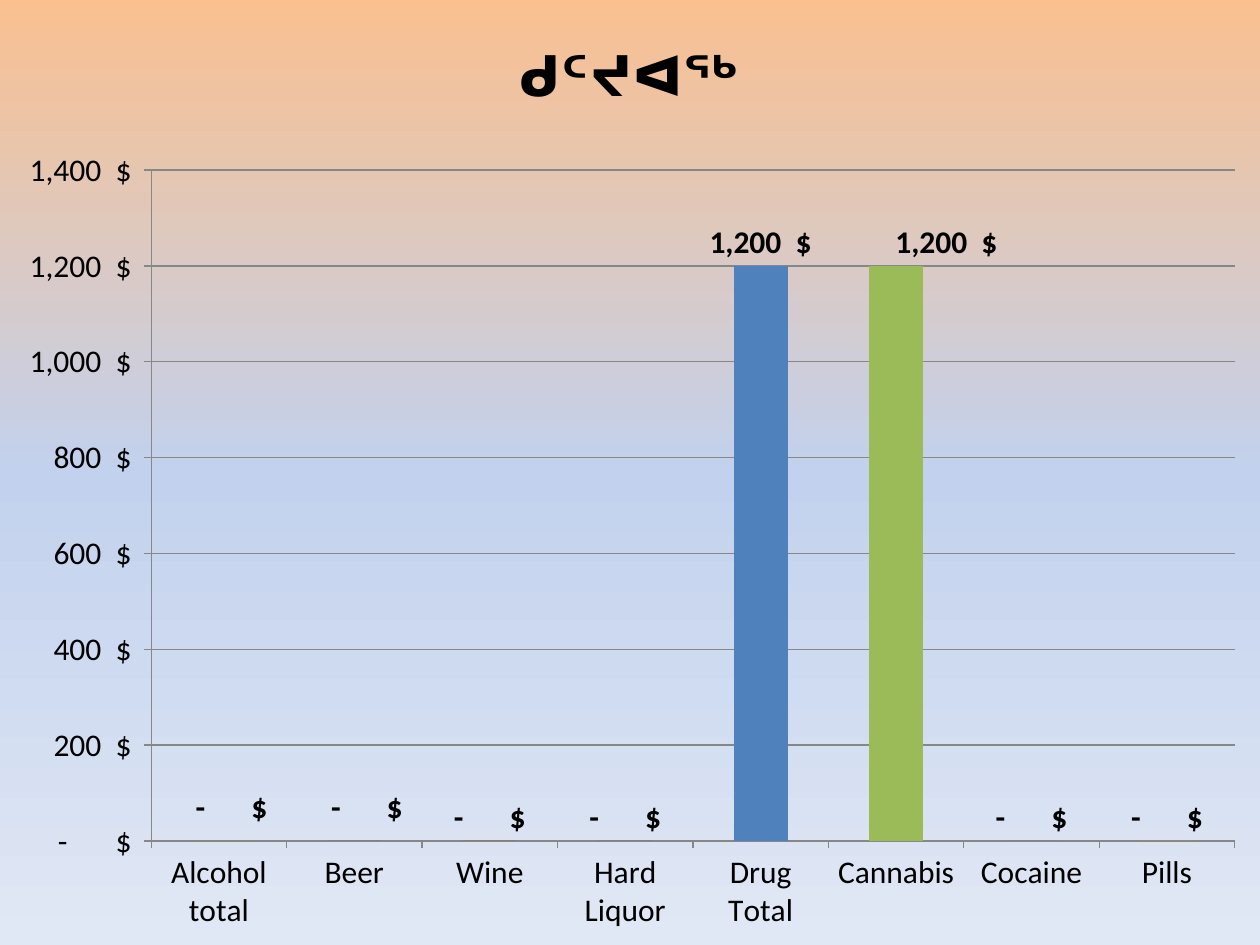
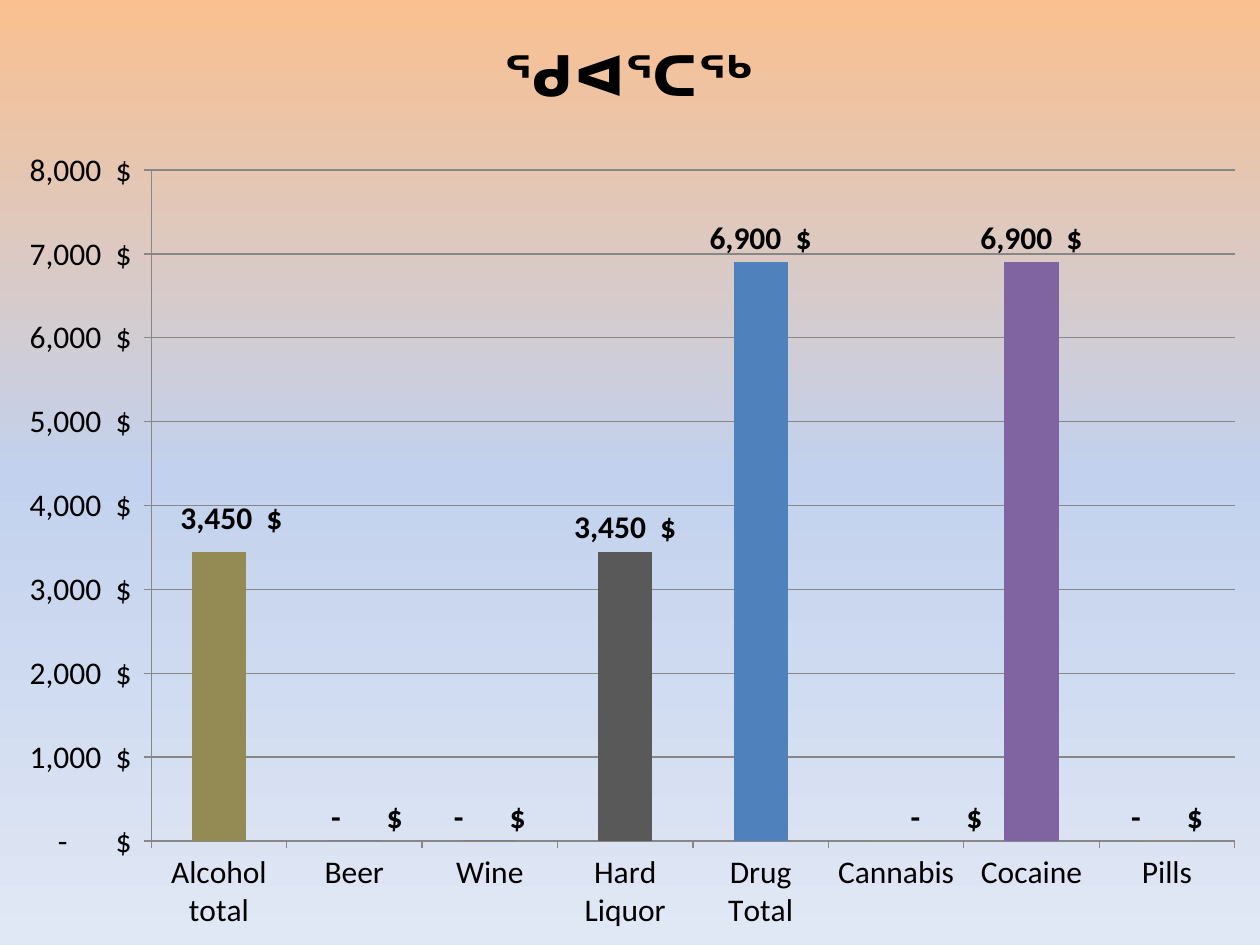
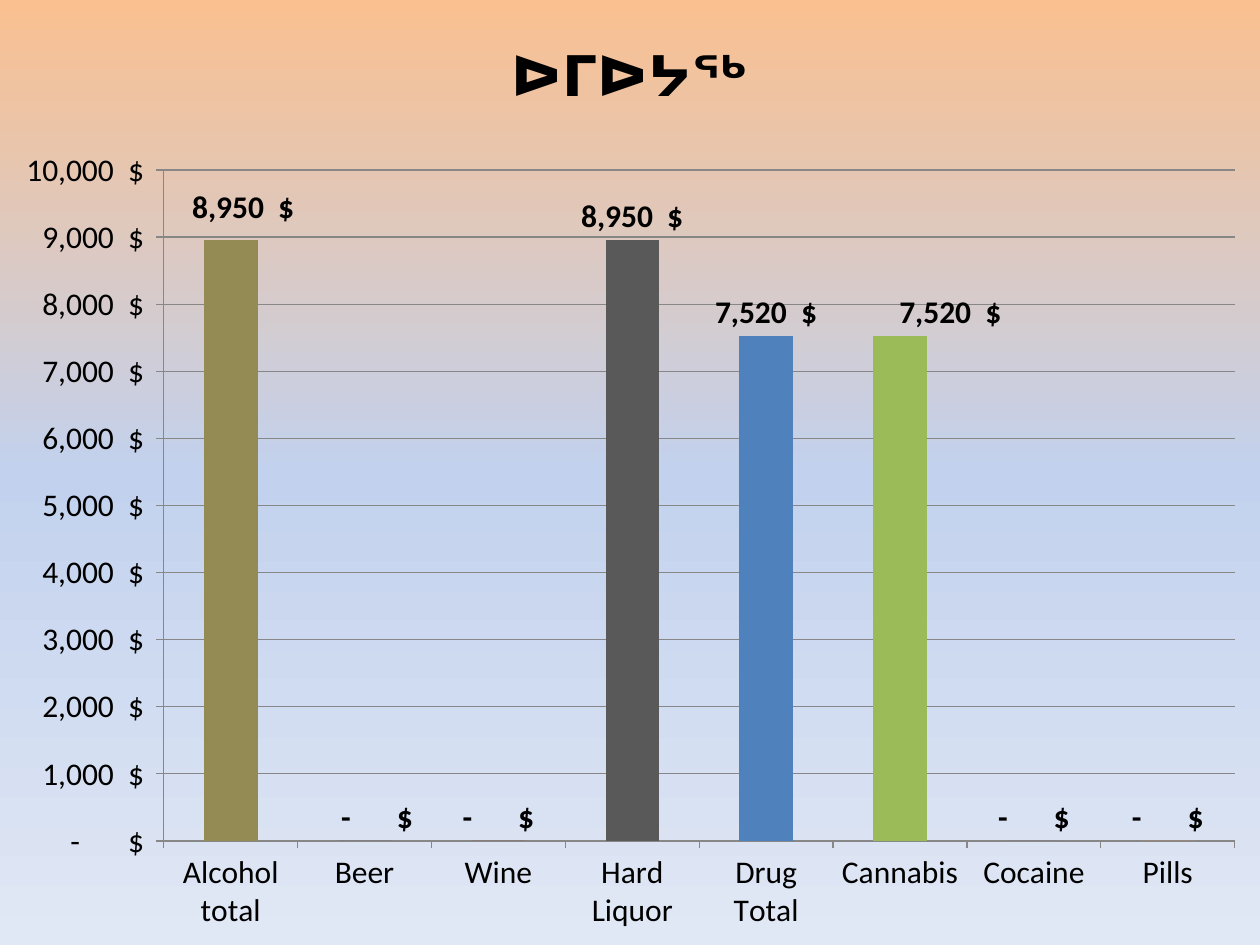
from copy import deepcopy
from dataclasses import dataclass

from lxml import etree
from pptx import Presentation
from pptx import util as u
from pptx.chart import data as chart_data
from pptx.dml import color
from pptx.enum import chart as chart_enum
from pptx.oxml import ns


# Content
CATEGORIES = ["Alcohol total", "Beer", "Wine", "Hard Liquor",
              "Drug Total", "Cannabis", "Cocaine", "Pills"]

COMMUNITIES = [
    {"title": "ᑯᑦᔪᐊᖅ", "values": [0, 0, 0, 0, 1200, 1200, 0, 0],
     "top": 1400, "step": 200, "plot_left": 0.12, "beer_shift": (0.01, -0.01)},
    {"title": "ᖁᐊᕐᑕᖅ", "values": [3450, 0, 0, 3450, 6900, 0, 6900, 0],
     "top": 8000, "step": 1000, "plot_left": 0.12, "beer_shift": (0.01, 0)},
    {"title": "ᐅᒥᐅᔭᖅ", "values": [8950, 0, 0, 8950, 7520, 7520, 0, 0],
     "top": 10000, "step": 1000, "plot_left": 0.13, "beer_shift": (0.01, 0)},
]

DOLLARS = (r'_ * #,##0_)\ "$"_ ;_ * \(#,##0\)\ "$"_ ;'
           r'_ * "-"??_)\ "$"_ ;_ @_ ')


@dataclass(frozen=True)
class Theme:
    font: str = "Calibri"
    text: str = "000000"
    line: str = "878787"
    background: tuple = ((0, "FAC090"), (0.5, "C2D1ED"), (1, "E1E8F5"))
    bars: tuple = ("948A54", "604A7B", "953735", "595959",
                   "4F81BD", "9BBB59", "8064A2", "F79646")
    title_size: int = 32
    body_size: int = 18


THEME = Theme()
PLOT_TOP, PLOT_RIGHT, PLOT_BOTTOM = 0.18, 0.98, 0.89


# Shared formatting
def rgb(value):
    return color.RGBColor.from_string(value)


def format_font(font, size=THEME.body_size, bold=False):
    font.name = THEME.font
    font.size = u.Pt(size)
    font.bold = bold
    font.color.rgb = rgb(THEME.text)


def write_text(text_frame, text, **font_format):
    run = text_frame.paragraphs[0].add_run()
    run.text = text
    format_font(run.font, **font_format)


def manual_layout(**settings):
    layout = etree.Element(ns.qn("c:layout"))
    manual = etree.SubElement(layout, ns.qn("c:manualLayout"))
    for name, value in settings.items():
        etree.SubElement(manual, ns.qn(f"c:{name}")).set("val", str(value))
    return layout


def paint_background(master):
    fill = master.background.fill
    fill.gradient()
    fill.gradient_angle = 270
    stop_list = master.element.xpath(".//a:gsLst")[0]
    stop_list.insert(1, deepcopy(stop_list[0]))
    for stop, (position, value) in zip(fill.gradient_stops, THEME.background):
        stop.position = position
        stop.color.rgb = rgb(value)


# Chart parts
def format_axes(chart, community):
    value_axis, category_axis = chart.value_axis, chart.category_axis
    for axis in (value_axis, category_axis):
        axis.major_tick_mark = chart_enum.XL_TICK_MARK.OUTSIDE
        axis.minor_tick_mark = chart_enum.XL_TICK_MARK.NONE
        axis.format.line.color.rgb = rgb(THEME.line)
        axis.format.line.width = u.Pt(0.75)
    value_axis.minimum_scale = 0
    value_axis.maximum_scale = community["top"]
    value_axis.major_unit = community["step"]
    value_axis.has_major_gridlines = True
    value_axis.major_gridlines.format.line.color.rgb = rgb(THEME.line)
    value_axis.major_gridlines.format.line.width = u.Pt(0.75)
    value_axis.tick_labels.number_format = DOLLARS
    value_axis.tick_labels.number_format_is_linked = False


def format_labels(series, beer_shift):
    labels = series.data_labels
    labels.show_value = True
    labels.number_format = DOLLARS
    labels.number_format_is_linked = False
    labels.position = chart_enum.XL_LABEL_POSITION.OUTSIDE_END
    format_font(labels.font, bold=True)
    shared_format = labels._element.find(ns.qn("c:numFmt"))

    # Labels nudged away from their bars, as fractions of the chart
    shifts = {0: (0.01, -0.01), 1: beer_shift, 2: (0, 0), 5: (0.04, 0)}
    for index, (x, y) in shifts.items():
        label = series.points[index].data_label
        format_font(label.font, bold=True)
        label.position = chart_enum.XL_LABEL_POSITION.OUTSIDE_END
        element = labels._element.findall(ns.qn("c:dLbl"))[-1]
        element.insert(1, manual_layout(x=x, y=y))
        element.insert(2, deepcopy(shared_format))


def place_plot(chart, left):
    plot_area = chart._chartSpace.chart.plotArea
    for layout in plot_area.findall(ns.qn("c:layout")):
        plot_area.remove(layout)
    plot_area.insert(0, manual_layout(
        layoutTarget="inner", xMode="edge", yMode="edge",
        x=left, y=PLOT_TOP,
        w=round(PLOT_RIGHT - left, 2), h=round(PLOT_BOTTOM - PLOT_TOP, 2)))


def add_community_slide(presentation, community):
    slide = presentation.slides.add_slide(presentation.slide_layouts[6])
    spending = chart_data.CategoryChartData(number_format=DOLLARS)
    spending.categories = CATEGORIES
    spending.add_series("Series 1", community["values"])
    chart = slide.shapes.add_chart(
        chart_enum.XL_CHART_TYPE.COLUMN_CLUSTERED, 0, 0,
        presentation.slide_width, presentation.slide_height, spending).chart
    format_font(chart.font)
    chart.has_legend = False
    chart.has_title = True
    write_text(chart.chart_title.text_frame, community["title"],
               size=THEME.title_size, bold=True)
    chart.chart_title.include_in_layout = False

    plot = chart.plots[0]
    plot.gap_width = 150
    plot.vary_by_categories = False
    series = plot.series[0]
    for index, value in enumerate(THEME.bars):
        fill = series.points[index].format.fill
        fill.solid()
        fill.fore_color.rgb = rgb(value)
    format_axes(chart, community)
    format_labels(series, community["beer_shift"])
    place_plot(chart, community["plot_left"])


def main():
    presentation = Presentation()
    presentation.slide_width = u.Cm(25.4)
    presentation.slide_height = u.Cm(19.05)
    paint_background(presentation.slide_master)
    for community in COMMUNITIES:
        add_community_slide(presentation, community)
    presentation.save("out.pptx")


if __name__ == "__main__":
    main()
